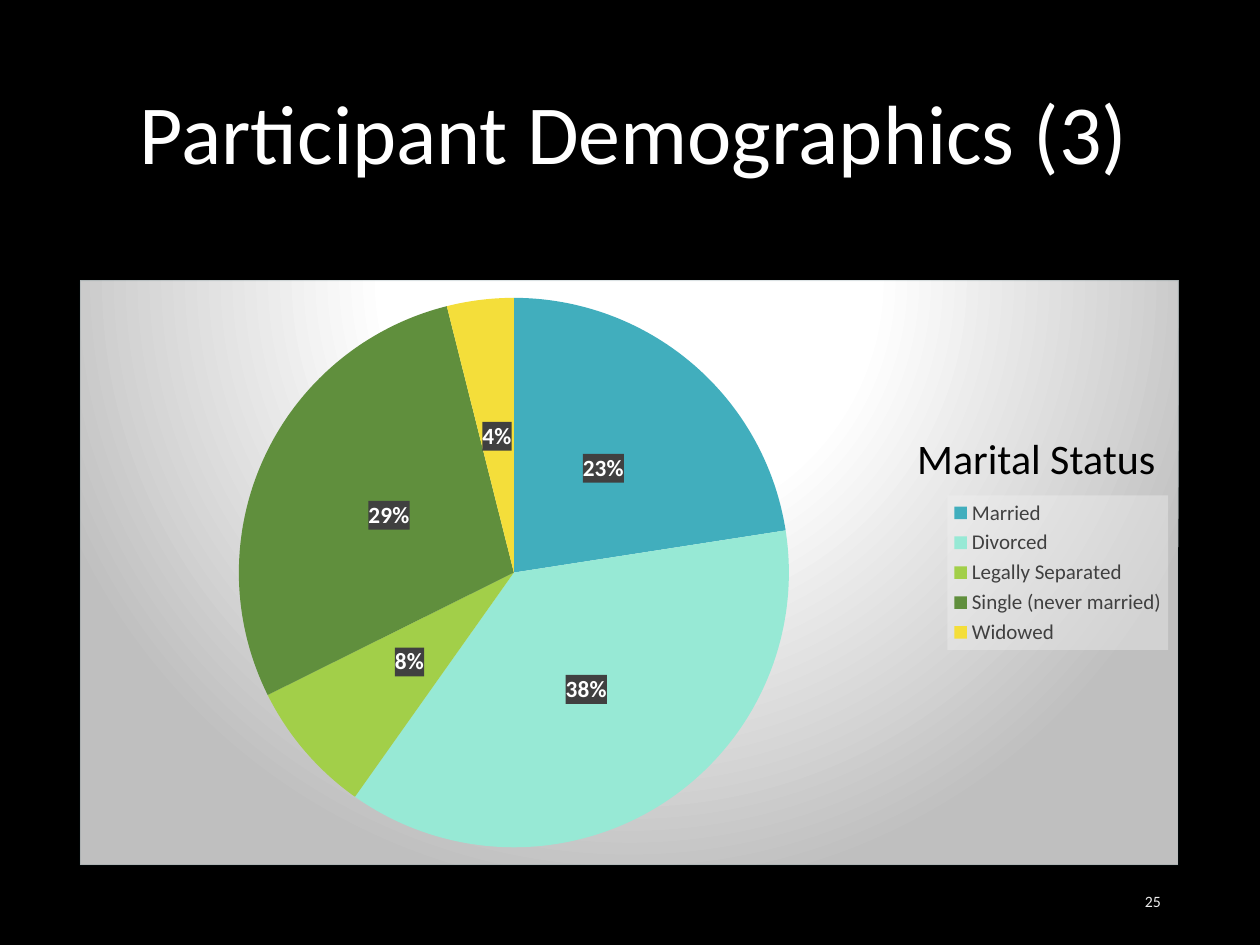
from dataclasses import dataclass

from lxml.etree import fromstring
from pptx import Presentation
from pptx.chart.data import CategoryChartData
from pptx.dml.color import RGBColor
from pptx.enum.chart import XL_CHART_TYPE, XL_LABEL_POSITION, XL_LEGEND_POSITION
from pptx.enum.text import MSO_ANCHOR, PP_ALIGN
from pptx.util import Cm, Pt

FONT = "Calibri"
NAMESPACES = (
    'xmlns:a="http://schemas.openxmlformats.org/drawingml/2006/main" '
    'xmlns:c="http://schemas.openxmlformats.org/drawingml/2006/chart"'
)
BACKDROP = """
<a:gradFill><a:gsLst>
<a:gs pos="0"><a:srgbClr val="FFFFFF"/></a:gs>
<a:gs pos="39000"><a:srgbClr val="FFFFFF"/></a:gs>
<a:gs pos="100000"><a:srgbClr val="BFBFBF"/></a:gs>
</a:gsLst><a:path path="circle">
<a:fillToRect l="50000" t="-80000" r="50000" b="180000"/>
</a:path></a:gradFill>
<a:ln w="9525"><a:solidFill><a:srgbClr val="13424B"><a:alpha val="14000"/></a:srgbClr></a:solidFill></a:ln>
"""


@dataclass(frozen=True)
class Slice:
    name: str
    percent: int
    color: str


@dataclass(frozen=True)
class Box:
    left: float
    top: float
    width: float
    height: float

    def lengths(self) -> tuple:
        return Cm(self.left), Cm(self.top), Cm(self.width), Cm(self.height)


SLICES = [
    Slice("Married", 23, "41AEBD"),
    Slice("Divorced", 38, "97E9D5"),
    Slice("Legally Separated", 8, "A2CF49"),
    Slice("Single (never married)", 29, "608F3D"),
    Slice("Widowed", 4, "F4DE3A"),
]


def rgb(value: str) -> RGBColor:
    return RGBColor.from_string(value)


def format_font(font, size: float, color: str, bold: bool = False) -> None:
    font.name = FONT
    font.size = Pt(size)
    font.bold = bold
    font.color.rgb = rgb(color)


def write_text(shape, text: str, *, size: float, color: str,
               align=PP_ALIGN.LEFT, anchor=MSO_ANCHOR.TOP, inset: float = 0.25) -> None:
    frame = shape.text_frame
    frame.word_wrap = True
    frame.vertical_anchor = anchor
    frame.margin_left = frame.margin_right = Cm(inset)
    frame.margin_top = frame.margin_bottom = Cm(0.13)
    paragraph = frame.paragraphs[0]
    paragraph.alignment = align
    run = paragraph.add_run()
    run.text = text
    format_font(run.font, size, color)


def chart_properties(content: str):
    return fromstring(f"<c:spPr {NAMESPACES}>{content}</c:spPr>")


def translucent_fill(color: str, opacity: int) -> str:
    return (f'<a:solidFill><a:srgbClr val="{color}"><a:alpha val="{opacity * 1000}"/>'
            "</a:srgbClr></a:solidFill>")


def place_plot(chart, left: float, top: float, width: float, height: float) -> None:
    plot_area = chart.element.find(".//{*}plotArea")
    for layout in plot_area.findall("{*}layout"):
        plot_area.remove(layout)
    plot_area.insert(0, fromstring(
        f'<c:layout {NAMESPACES}><c:manualLayout><c:layoutTarget val="inner"/>'
        f'<c:xMode val="edge"/><c:yMode val="edge"/><c:x val="{left}"/><c:y val="{top}"/>'
        f'<c:w val="{width}"/><c:h val="{height}"/></c:manualLayout></c:layout>'))


def add_status_chart(slide, slices: list[Slice], box: Box) -> None:
    data = CategoryChartData()
    data.categories = [item.name for item in slices]
    data.add_series("Series 1", [item.percent for item in slices])
    chart = slide.shapes.add_chart(XL_CHART_TYPE.PIE, *box.lengths(), data).chart
    chart.has_title = False
    format_font(chart.font, 10, "FFFFFF")
    chart.element.find("{*}chart").addnext(chart_properties(BACKDROP))
    place_plot(chart, 0.14, 0.03, 0.51, 0.94)

    plot = chart.plots[0]
    plot.vary_by_categories = True
    for index, item in enumerate(slices):
        fill = plot.series[0].points[index].format.fill
        fill.solid()
        fill.fore_color.rgb = rgb(item.color)

    plot.has_data_labels = True
    labels = plot.data_labels
    labels.show_value = True
    labels.show_percentage = False
    labels.number_format = '0"%"'
    labels.number_format_is_linked = False
    labels.position = XL_LABEL_POSITION.CENTER
    format_font(labels.font, 13.3, "FFFFFF", bold=True)
    chart.element.find(".//{*}dLbls/{*}numFmt").addnext(
        chart_properties(translucent_fill("404040", 90)))

    chart.has_legend = True
    legend = chart.legend
    legend.position = XL_LEGEND_POSITION.RIGHT
    legend.include_in_layout = False
    format_font(legend.font, 12, "404040")
    chart.element.find(".//{*}legend/{*}txPr").addprevious(
        chart_properties(translucent_fill("F2F2F2", 39)))


def main() -> None:
    presentation = Presentation()
    presentation.slide_width, presentation.slide_height = Cm(25.4), Cm(19.05)
    slide = presentation.slides.add_slide(presentation.slide_layouts[5])
    background = slide.background.fill
    background.solid()
    background.fore_color.rgb = rgb("000000")

    title = slide.shapes.title
    title.left, title.top, title.width, title.height = Box(1.35, 1.32, 22.86, 2.64).lengths()
    write_text(title, "Participant Demographics (3)", size=48, color="FFFFFF",
               align=PP_ALIGN.CENTER, anchor=MSO_ANCHOR.MIDDLE)

    add_status_chart(slide, SLICES, Box(1.6, 5.64, 22.17, 11.81))

    heading = slide.shapes.add_textbox(*Box(18.36, 8.59, 5.44, 1.27).lengths())
    write_text(heading, "Marital Status", size=24, color="000000", inset=0.13)

    number = slide.shapes.add_textbox(*Box(17.93, 17.65, 5.72, 1.02).lengths())
    write_text(number, "25", size=9, color="EDEDED",
               align=PP_ALIGN.RIGHT, anchor=MSO_ANCHOR.MIDDLE)

    presentation.save("out.pptx")


if __name__ == "__main__":
    main()
